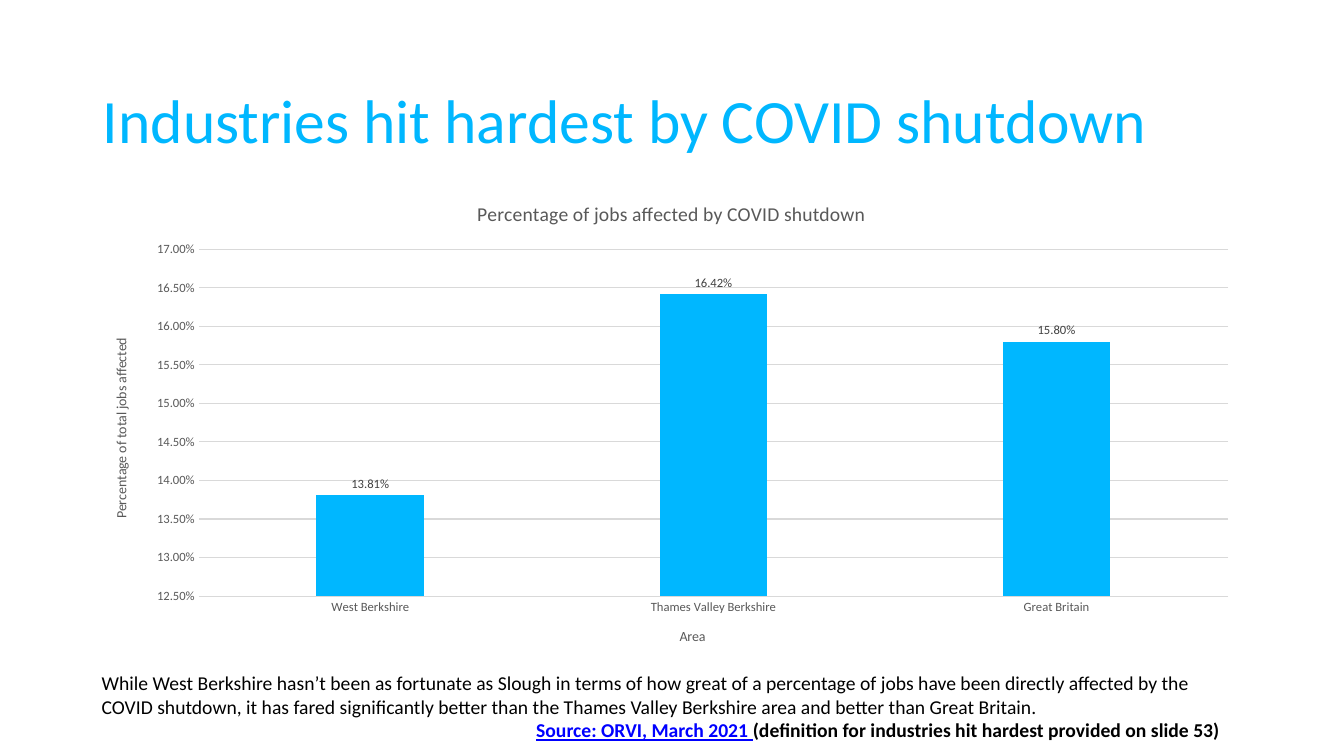
from pptx import Presentation
from pptx.chart.data import CategoryChartData
from pptx.dml.color import RGBColor
from pptx.enum.chart import XL_CHART_TYPE as ChartType
from pptx.enum.chart import XL_LABEL_POSITION as LabelPosition
from pptx.enum.chart import XL_TICK_MARK as TickMark
from pptx.enum.text import MSO_ANCHOR as Anchor
from pptx.enum.text import MSO_AUTO_SIZE as AutoSize
from pptx.enum.text import PP_ALIGN as Align
from pptx.util import Inches, Pt

FONT = "Calibri"
SKY, BLACK, LINK, GREY, DARK, GRID = (
    "00B7FF", "000000", "0000FF", "595959", "404040", "D9D9D9")
PERCENT = "0.00%"
JOBS_AFFECTED = {
    "West Berkshire": 0.1381,
    "Thames Valley Berkshire": 0.1642,
    "Great Britain": 0.158,
}
SUMMARY = (
    "While West Berkshire hasn’t been as fortunate as Slough in terms of how "
    "great of a percentage of jobs have been directly affected by the COVID "
    "shutdown, it has fared significantly better than the Thames Valley "
    "Berkshire area and better than Great Britain.")


def set_values(target, values):
    """Set each attribute named in a dict."""
    for name, value in values.items():
        setattr(target, name, value)


def set_font(font, size, color, **values):
    """Give a font its face, size, colour and other values."""
    set_values(font, {"name": FONT, "size": Pt(size), **values})
    font.color.rgb = RGBColor.from_string(color)


def set_line(line, color, width=0.75):
    """Give a line its colour and width."""
    line.color.rgb = RGBColor.from_string(color)
    line.width = Pt(width)


def place(shape, left, top, width, height):
    """Move and size a shape in inches."""
    set_values(shape, {"left": Inches(left), "top": Inches(top),
                       "width": Inches(width), "height": Inches(height)})


def add_span(para, text, size, color, **values):
    """Add a formatted run to a paragraph."""
    span = para.add_run()
    span.text = text
    set_font(span.font, size, color, **values)


def set_title(page, text):
    """Fill and format the slide title."""
    title = page.shapes.title
    place(title, 0.92, 0.61, 11.5, 1.24)
    frame = title.text_frame
    set_values(frame, {"vertical_anchor": Anchor.MIDDLE, "word_wrap": True,
                       "auto_size": AutoSize.NONE})
    para = frame.paragraphs[0]
    set_values(para, {"alignment": Align.LEFT, "line_spacing": 0.9})
    add_span(para, text, 44, SKY)


def add_caption(page):
    """Add the summary and its source line below the chart."""
    box = page.shapes.add_textbox(
        Inches(0.91), Inches(6.61), Inches(11.5), Inches(0.81))
    frame = box.text_frame
    frame.word_wrap = True
    add_span(frame.paragraphs[0], SUMMARY, 14, BLACK)
    source = frame.add_paragraph()
    source._p.get_or_add_pPr().set("marL", str(Inches(4.31)))
    add_span(source, "Source: ORVI, March 2021 ", 14, LINK,
             bold=True, underline=True)
    add_span(source, "(definition for industries hit hardest provided on slide 53)",
             14, BLACK, bold=True)


def title_chart_part(part, text, size):
    """Give a chart or an axis a title."""
    frame = (part.chart_title if hasattr(part, "chart_title")
             else part.axis_title).text_frame
    add_span(frame.paragraphs[0], text, size, GREY, bold=False)


def style_axis(axis, title):
    """Format an axis and add its title."""
    set_values(axis, {"major_tick_mark": TickMark.NONE,
                      "minor_tick_mark": TickMark.NONE})
    set_font(axis.tick_labels.font, 9, GREY)
    title_chart_part(axis, title, 10)


def add_jobs_chart(page):
    """Add the column chart of affected jobs."""
    data = CategoryChartData(number_format=PERCENT)
    data.categories = list(JOBS_AFFECTED)
    data.add_series("Series 1", list(JOBS_AFFECTED.values()))
    chart = page.shapes.add_chart(
        ChartType.COLUMN_CLUSTERED, Inches(0.91), Inches(1.8),
        Inches(11.5), Inches(4.8), data).chart
    set_font(chart.font, 10, BLACK)
    chart.has_legend = False
    title_chart_part(chart, "Percentage of jobs affected by COVID shutdown", 14)

    areas, shares = chart.category_axis, chart.value_axis
    style_axis(areas, "Area")
    set_line(areas.format.line, GRID)
    style_axis(shares, "Percentage of total jobs affected")
    set_values(shares, {"minimum_scale": 0.125, "maximum_scale": 0.17,
                        "major_unit": 0.005})
    set_values(shares.tick_labels, {"number_format": PERCENT,
                                    "number_format_is_linked": False})
    shares.format.line.fill.background()
    set_line(shares.major_gridlines.format.line, GRID)

    plot = chart.plots[0]
    set_values(plot, {"gap_width": 219, "overlap": -27,
                      "vary_by_categories": False})
    series = plot.series[0]
    series.format.fill.solid()
    series.format.fill.fore_color.rgb = RGBColor.from_string(SKY)
    labels = series.data_labels
    set_values(labels, {"show_value": True, "position": LabelPosition.OUTSIDE_END,
                        "number_format": PERCENT,
                        "number_format_is_linked": False})
    set_font(labels.font, 9, DARK)


def main():
    """Build and save the slide."""
    deck = Presentation()
    set_values(deck, {"slide_width": Inches(13.33), "slide_height": Inches(7.5)})
    page = deck.slides.add_slide(deck.slide_layouts[5])
    set_title(page, "Industries hit hardest by COVID shutdown")
    add_caption(page)
    add_jobs_chart(page)
    deck.save("out.pptx")


if __name__ == "__main__":
    main()
